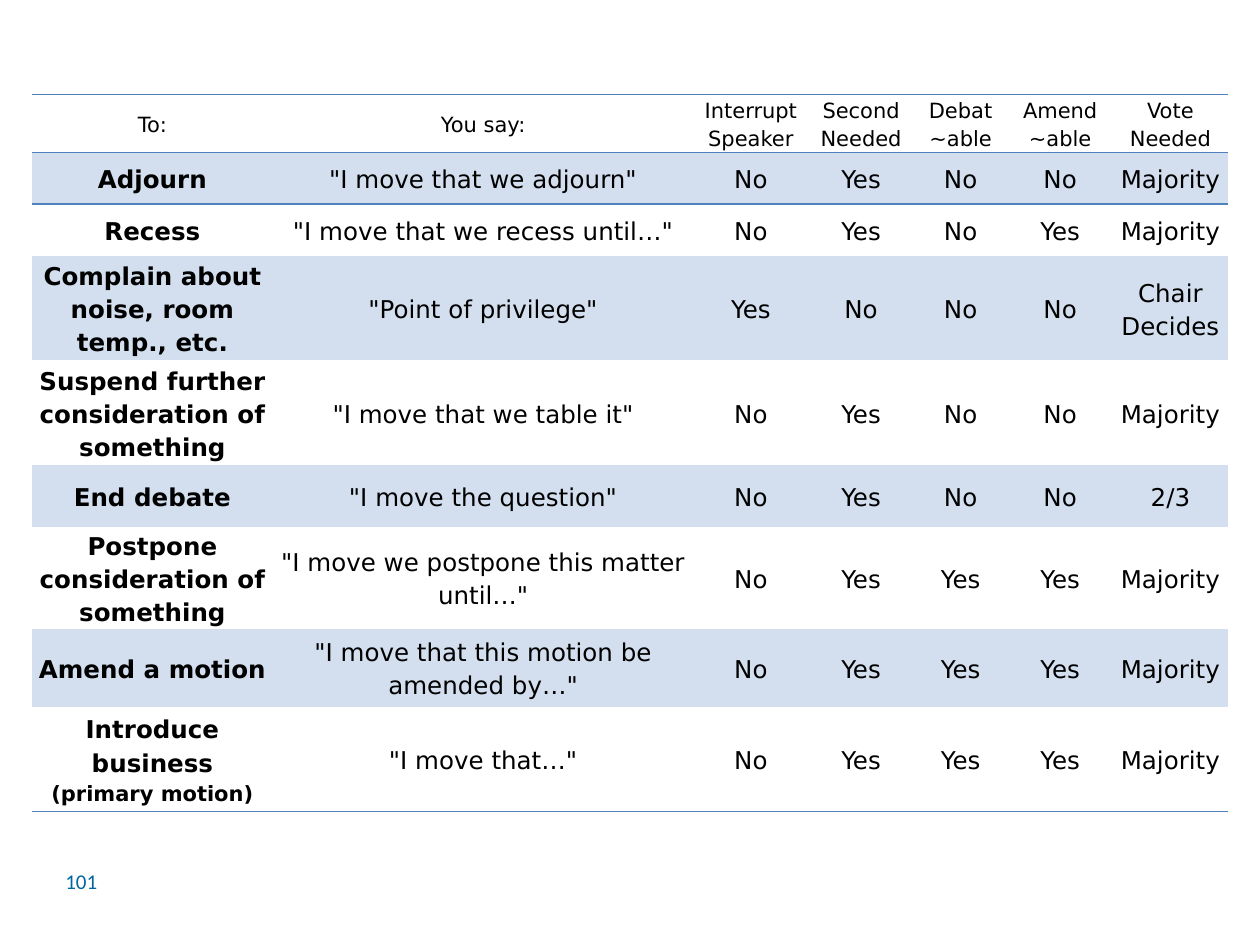
from dataclasses import dataclass

from lxml import etree
from pptx import Presentation
from pptx.dml.color import RGBColor
from pptx.enum.text import MSO_ANCHOR, PP_ALIGN
from pptx.oxml.ns import qn
from pptx.util import Inches, Pt

CENTER, LEFT = PP_ALIGN.CENTER, PP_ALIGN.LEFT
MIDDLE = MSO_ANCHOR.MIDDLE


@dataclass(frozen=True)
class Theme:
    text: str = "000000"
    rule: str = "4F81BD"
    band: str = "D3DFEE"
    page_number: str = "0066A1"
    table_font: str = "DejaVu Sans"
    page_font: str = "Calibri"
    small: int = 12
    body: int = 14
    rule_width: int = 1
    line_spacing: float = 1.15
    plain_table: str = "{2D5ABB26-0587-4C30-8999-92F81FD0307C}"


THEME = Theme()

COLUMN_WIDTHS = [1.92, 3.33, 0.92, 0.83, 0.75, 0.83, 0.92]
ROW_HEIGHTS = [0.46, 0.41, 0.41, 0.83, 0.83, 0.49, 0.81, 0.62, 0.83]

HEADINGS = ["To:", "You say:", "Interrupt Speaker", "Second Needed",
            "Debat\n~able", "Amend\n~able", "Vote Needed"]
MOTIONS = [
    ["Adjourn", '"I move that we adjourn"', "No", "Yes", "No", "No", "Majority"],
    ["Recess", '"I move that we recess until…"', "No", "Yes", "No", "Yes", "Majority"],
    ["Complain about noise, room temp., etc.", '"Point of privilege"',
     "Yes", "No", "No", "No", "Chair Decides"],
    ["Suspend further consideration of something", '"I move that we table it"',
     "No", "Yes", "No", "No", "Majority"],
    ["End debate", '"I move the question"', "No", "Yes", "No", "No", "2/3"],
    ["Postpone consideration of something",
     '"I move we postpone this matter until…"',
     "No", "Yes", "Yes", "Yes", "Majority"],
    ["Amend a motion", '"I move that this motion be amended by…"',
     "No", "Yes", "Yes", "Yes", "Majority"],
    ["Introduce business ", '"I move that…"', "No", "Yes", "Yes", "Yes", "Majority"],
]
BUSINESS_NOTE = "(primary motion)"


def add_text(paragraph, text, *, size=THEME.body, bold=False, color=THEME.text,
             font=THEME.table_font, align=CENTER, spacing=THEME.line_spacing):
    """Append formatted text to a paragraph; a newline becomes a line break."""
    paragraph.alignment = align
    paragraph.line_spacing = spacing
    for index, line in enumerate(text.split("\n")):
        if index:
            paragraph.add_line_break()
        run = paragraph.add_run()
        run.text = line
        run.font.size = Pt(size)
        run.font.bold = bold
        run.font.name = font
        run.font.color.rgb = RGBColor.from_string(color)


def add_rule(cell, side):
    """Draw a border on one side of a cell: "lnT" or "lnB"."""
    properties = cell._tc.get_or_add_tcPr()
    line = etree.SubElement(properties, qn(f"a:{side}"), w=str(Pt(THEME.rule_width)))
    fill = etree.SubElement(line, qn("a:solidFill"))
    etree.SubElement(fill, qn("a:srgbClr"), val=THEME.rule)


def format_cell(cell, row, last_row):
    cell.vertical_anchor = MIDDLE
    cell.margin_left = cell.margin_right = Inches(0.05)
    cell.margin_top = cell.margin_bottom = 0
    # Borders come before the fill in the cell properties
    if row in (0, 1):
        add_rule(cell, "lnT")
    if row in (0, last_row):
        add_rule(cell, "lnB")
    if row % 2:
        cell.fill.solid()
        cell.fill.fore_color.rgb = RGBColor.from_string(THEME.band)
    else:
        cell.fill.background()


def add_motion_table(slide):
    rows = [HEADINGS] + MOTIONS
    last_row = len(rows) - 1
    frame = slide.shapes.add_table(
        len(rows), len(HEADINGS), Inches(0.25), Inches(0.75),
        Inches(sum(COLUMN_WIDTHS)), Inches(sum(ROW_HEIGHTS)))
    table = frame.table
    table.horz_banding = False
    table._tbl.tblPr.find(qn("a:tableStyleId")).text = THEME.plain_table

    for column, width in zip(table.columns, COLUMN_WIDTHS):
        column.width = Inches(width)
    for table_row, height in zip(table.rows, ROW_HEIGHTS):
        table_row.height = Inches(height)

    for row, texts in enumerate(rows):
        for column, text in enumerate(texts):
            cell = table.cell(row, column)
            format_cell(cell, row, last_row)
            add_text(cell.text_frame.paragraphs[0], text,
                     size=THEME.body if row else THEME.small,
                     bold=row > 0 and column == 0)

    # Smaller remark after the last motion
    add_text(table.cell(last_row, 0).text_frame.paragraphs[0], BUSINESS_NOTE,
             size=THEME.small, bold=True)


def add_page_number(slide, number):
    box = slide.shapes.add_textbox(Inches(0.42), Inches(6.79), Inches(0.53), Inches(0.4))
    frame = box.text_frame
    frame.word_wrap = True
    frame.vertical_anchor = MIDDLE
    add_text(frame.paragraphs[0], number, size=THEME.small, font=THEME.page_font,
             color=THEME.page_number, align=LEFT, spacing=1.0)


def main():
    presentation = Presentation()
    presentation.slide_width = Inches(10)
    presentation.slide_height = Inches(7.5)
    slide = presentation.slides.add_slide(presentation.slide_layouts[6])
    add_motion_table(slide)
    add_page_number(slide, "101")
    presentation.save("out.pptx")


if __name__ == "__main__":
    main()
